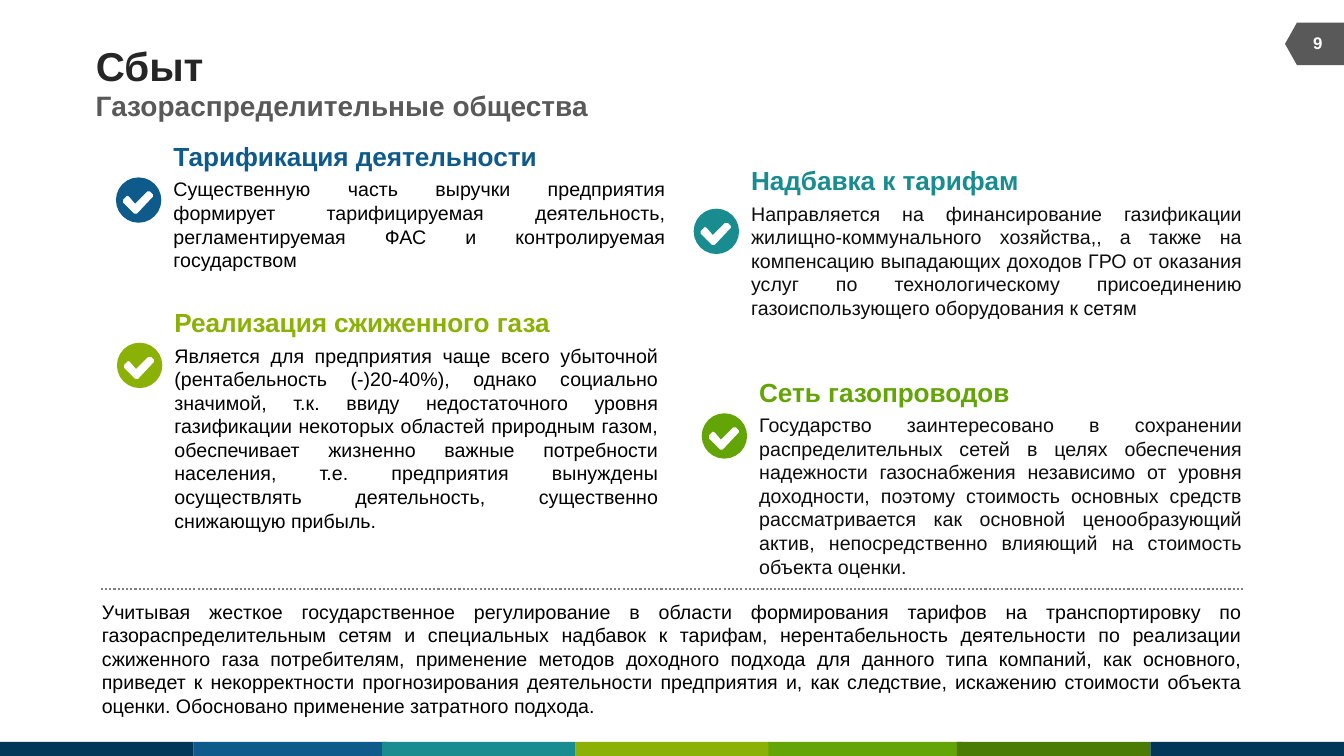
import math
from dataclasses import dataclass

import pptx
import pptx.dml.color
import pptx.enum.dml
import pptx.enum.shapes
import pptx.enum.text
import pptx.oxml
import pptx.util

Inches = pptx.util.Inches
Shape = pptx.enum.shapes.MSO_SHAPE
Anchor = pptx.enum.text.MSO_ANCHOR
Align = pptx.enum.text.PP_ALIGN
AutoSize = pptx.enum.text.MSO_AUTO_SIZE

TITLE = "Сбыт"
SUBTITLE = "Газораспределительные общества"
PAGE_NUMBER = "9"
CONCLUSION = (
    "Учитывая жесткое государственное регулирование в области формирования тарифов на "
    "транспортировку по газораспределительным сетям и специальных надбавок к тарифам, "
    "нерентабельность деятельности по реализации сжиженного газа потребителям, применение "
    "методов доходного подхода для данного типа компаний, как основного, приведет к "
    "некорректности прогнозирования деятельности предприятия и, как следствие, искажению "
    "стоимости объекта оценки. Обосновано применение затратного подхода."
)
TOPICS = [
    dict(heading="Тарификация деятельности", color="0E5A8B", ink="000000",
         left=1.72, top=1.39, heading_width=3.65, width=4.88, lines=4, icon_top=1.76,
         body="Существенную часть выручки предприятия формирует тарифицируемая "
              "деятельность, регламентируемая ФАС и контролируемая государством"),
    dict(heading="Реализация сжиженного газа", color="8BB106", ink="000000",
         left=1.73, top=3.04, heading_width=4.8, width=4.8, lines=8, icon_top=3.4,
         body="Является для предприятия чаще всего убыточной (рентабельность (-)20-40%), "
              "однако социально значимой, т.к. ввиду недостаточного уровня газификации "
              "некоторых областей природным газом, обеспечивает жизненно важные потребности "
              "населения, т.е. предприятия вынуждены осуществлять деятельность, существенно "
              "снижающую прибыль."),
    dict(heading="Надбавка к тарифам", color="198C8F", ink="0D0D0D",
         left=7.45, top=1.63, heading_width=2.68, width=4.87, lines=5, icon_top=2.07,
         body="Направляется на финансирование газификации жилищно-коммунального "
              "хозяйства,, а также на компенсацию выпадающих доходов ГРО от оказания услуг "
              "по технологическому присоединению газоиспользующего оборудования к сетям"),
    dict(heading="Сеть газопроводов", color="63A406", ink="0D0D0D",
         left=7.53, top=3.73, heading_width=2.51, width=4.79, lines=7, icon_top=4.1,
         body="Государство заинтересовано в сохранении распределительных сетей в целях "
              "обеспечения надежности газоснабжения независимо от уровня доходности, поэтому "
              "стоимость основных средств рассматривается как основной ценообразующий актив, "
              "непосредственно влияющий на стоимость объекта оценки."),
]
STRIPES = [
    (0, "023759"), (1.92, "0E5A8B"), (3.79, "198C8F"), (5.71, "8BB106"),
    (7.62, "63A406"), (9.49, "4A7B04"), (11.41, "023759"),
]
CHECK_MARK = [
    (0.37, 0.17), (0.34, 0.14), (0.31, 0.14), (0.19, 0.26), (0.13, 0.19), (0.11, 0.18),
    (0.1, 0.19), (0.07, 0.22), (0.07, 0.25), (0.18, 0.36), (0.21, 0.36), (0.37, 0.19),
]
ICON_SIZE = 0.45
ICON_GAP = 0.57
CIRCLE_POINTS = 24
HEADING_HEIGHT = 0.31
BODY_OFFSET = 0.37
LINE_HEIGHT = 0.235


@dataclass(frozen=True)
class Theme:
    font: str = "Arial"
    title: str = "262626"
    muted: str = "595959"
    rule: str = "808080"
    ink: str = "000000"
    light: str = "FFFFFF"
    title_size: float = 28.8
    subtitle_size: float = 20
    heading_size: float = 18.65
    body_size: float = 14
    number_size: float = 12


theme = Theme()


def rgb(value):
    return pptx.dml.color.RGBColor.from_string(value)


def paint(shape, color):
    shape.shadow.inherit = False
    shape.fill.solid()
    shape.fill.fore_color.rgb = rgb(color)
    shape.line.fill.background()


def write(holder, text, size, color, bold=False, align=Align.LEFT,
          anchor=Anchor.TOP, wrap=True, fit=AutoSize.NONE):
    frame = holder.text_frame
    frame.margin_left = frame.margin_right = frame.margin_top = frame.margin_bottom = 0
    frame.vertical_anchor = anchor
    frame.word_wrap = wrap
    frame.auto_size = fit
    paragraph = frame.paragraphs[0]
    paragraph.alignment = align
    run = paragraph.add_run()
    run.text = text
    run.font.name = theme.font
    run.font.size = pptx.util.Pt(size)
    run.font.bold = bold
    run.font.color.rgb = rgb(color)


def add_text(slide, box, *args, **kwargs):
    write(slide.shapes.add_textbox(*map(Inches, box)), *args, **kwargs)


def add_check_icon(slide, left, top, color):
    radius = ICON_SIZE / 2
    angles = [math.tau * step / CIRCLE_POINTS for step in range(CIRCLE_POINTS)]
    circle = [(radius + radius * math.cos(a), radius + radius * math.sin(a)) for a in angles]
    disc, mark = ([(Inches(left + x), Inches(top + y)) for x, y in outline]
                  for outline in (circle, CHECK_MARK))
    builder = slide.shapes.build_freeform(*disc[0])
    builder.add_line_segments(disc[1:], close=True)
    builder.move_to(*mark[0])
    builder.add_line_segments(mark[1:], close=True)
    paint(builder.convert_to_shape(), color)


def add_topic(slide, topic):
    left, top = topic["left"], topic["top"]
    add_text(slide, (left, top, topic["heading_width"], HEADING_HEIGHT), topic["heading"],
             theme.heading_size, topic["color"], bold=True, wrap=False,
             fit=AutoSize.SHAPE_TO_FIT_TEXT)
    add_text(slide, (left, top + BODY_OFFSET, topic["width"], topic["lines"] * LINE_HEIGHT),
             topic["body"], theme.body_size, topic["ink"], align=Align.JUSTIFY,
             fit=AutoSize.SHAPE_TO_FIT_TEXT)
    add_check_icon(slide, left - ICON_GAP, topic["icon_top"], topic["color"])


def main():
    deck = pptx.Presentation()
    deck.slide_width, deck.slide_height = Inches(13.33), Inches(7.5)
    slide = deck.slides.add_slide(deck.slide_layouts[5])

    for left, color in STRIPES:
        stripe = slide.shapes.add_shape(
            Shape.RECTANGLE, *map(Inches, (left, 7.36, 1.92, 0.14)))
        paint(stripe, color)

    number_tag = slide.shapes.add_shape(
        Shape.FLOWCHART_OFFPAGE_CONNECTOR, *map(Inches, (12.83, 0.14, 0.42, 0.59)))
    number_tag.rotation = 90
    paint(number_tag, theme.muted)
    add_text(slide, (12.79, 0.22, 0.56, 0.4), PAGE_NUMBER, theme.number_size, theme.light,
             bold=True, align=Align.CENTER, anchor=Anchor.MIDDLE)

    title = slide.shapes.title
    title.left, title.top, title.width, title.height = map(Inches, (0.95, 0.39, 8.22, 0.52))
    write(title, TITLE, theme.title_size, theme.title, bold=True,
          anchor=Anchor.MIDDLE, wrap=False)
    add_text(slide, (0.95, 0.9, 6, 0.29), SUBTITLE, theme.subtitle_size, theme.muted,
             bold=True, anchor=Anchor.MIDDLE)

    for topic in TOPICS:
        add_topic(slide, topic)

    divider = slide.shapes.add_connector(
        pptx.enum.shapes.MSO_CONNECTOR.STRAIGHT, *map(Inches, (1, 5.84, 12.33, 5.84)))
    divider.line.color.rgb = rgb(theme.rule)
    divider.line.width = pptx.util.Pt(1.5)
    divider.line.dash_style = pptx.enum.dml.MSO_LINE.ROUND_DOT
    divider.element.spPr.append(pptx.oxml.parse_xml(
        '<a:effectLst xmlns:a="http://schemas.openxmlformats.org/drawingml/2006/main"/>'))
    add_text(slide, (1.01, 5.95, 11.31, 1.18), CONCLUSION, theme.body_size, theme.ink,
             align=Align.JUSTIFY, fit=AutoSize.SHAPE_TO_FIT_TEXT)

    deck.save("out.pptx")


if __name__ == "__main__":
    main()
